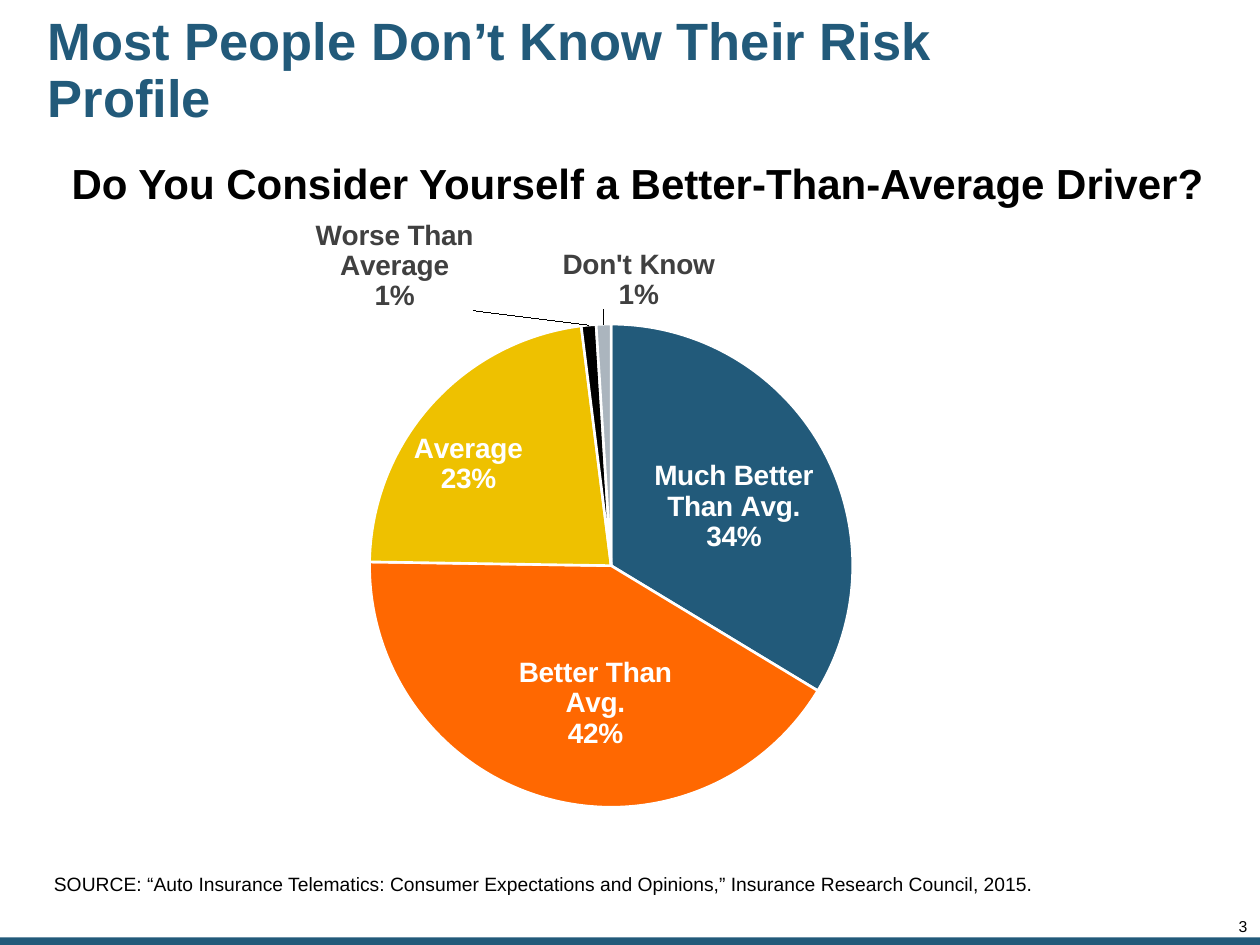
import pptx
import pptx.chart.data
import pptx.dml.color
import pptx.enum.chart
import pptx.enum.shapes
import pptx.enum.text
import pptx.oxml
import pptx.oxml.ns
import pptx.util
from dataclasses import dataclass

Inches = pptx.util.Inches
Align = pptx.enum.text.PP_ALIGN
Place = pptx.enum.chart.XL_LABEL_POSITION


@dataclass
class Theme:
    face: str = "Arial"
    blue: str = "225A7A"
    black: str = "000000"
    white: str = "FFFFFF"
    gray: str = "404040"
    head: int = 30
    ask: int = 24
    label: int = 16
    note: int = 11
    page: int = 9


theme = Theme()


def style(font, size, color, bold=False):
    font.name = theme.face
    font.size = pptx.util.Pt(size)
    font.bold = bold
    font.color.rgb = pptx.dml.color.RGBColor.from_string(color)


def write(shape, box, words, size, color, bold=False, inset=(0.1, 0.05)):
    shape.left, shape.top, shape.width, shape.height = map(Inches, box)
    frame = shape.text_frame
    frame.word_wrap = True
    frame.margin_left = frame.margin_right = Inches(inset[0])
    frame.margin_top = frame.margin_bottom = Inches(inset[1])
    line = frame.paragraphs[0]
    run = line.add_run()
    run.text = words
    style(run.font, size, color, bold)
    return line


deck = pptx.Presentation()
deck.slide_width, deck.slide_height = Inches(10), Inches(7.5)
slide = deck.slides.add_slide(deck.slide_layouts[5])
shapes = slide.shapes

bar = shapes.add_shape(pptx.enum.shapes.MSO_SHAPE.RECTANGLE,
                       Inches(0), Inches(7.44), Inches(10), Inches(0.06))
bar.shadow.inherit = False
bar.fill.solid()
bar.fill.fore_color.rgb = pptx.dml.color.RGBColor.from_string(theme.blue)
bar.line.fill.background()

title = shapes.title
line = write(title, (0.33, 0.1, 8.09, 0.94), "Most People Don’t Know Their Risk Profile",
             theme.head, theme.blue, True, (0.05, 0.05))
line.alignment = Align.LEFT
line.line_spacing = 0.9
title.text_frame.vertical_anchor = pptx.enum.text.MSO_ANCHOR.MIDDLE
title.text_frame.auto_size = pptx.enum.text.MSO_AUTO_SIZE.NONE

slices = [
    ("Much Better Than Avg.", 0.34, theme.blue, theme.white, Place.CENTER, 0.02, 0),
    ("Better Than Avg.", 0.42, "FF6801", theme.white, Place.CENTER, 0.02, 0.03),
    ("Average", 0.23, "EEC100", theme.white, Place.CENTER, -0.06, -0.03),
    ("Worse Than Average", 0.01, theme.black, theme.gray, Place.OUTSIDE_END, -0.13, -0.01),
    ("Don't Know", 0.01, "ABB5BE", theme.gray, Place.OUTSIDE_END, 0.04, -0.01),
]
data = pptx.chart.data.CategoryChartData(number_format="0%")
data.categories = [part[0] for part in slices]
data.add_series("Series 1", [part[1] for part in slices])
chart = shapes.add_chart(pptx.enum.chart.XL_CHART_TYPE.PIE, Inches(1.74), Inches(1.67),
                         Inches(6.99), Inches(5.64), data).chart
chart.has_legend = False
chart.has_title = False
style(chart.font, theme.label, theme.gray, True)
plot = chart.plots[0]
plot.vary_by_categories = False
series = plot.series[0]

space = pptx.oxml.ns.nsdecls("c")
area = chart._chartSpace.chart.plotArea
for old in area.xpath("c:layout"):
    area.remove(old)
area.insert(0, pptx.oxml.parse_xml(
    f'<c:layout {space}><c:manualLayout><c:layoutTarget val="inner"/>'
    '<c:xMode val="edge"/><c:yMode val="edge"/><c:x val="0.17"/><c:y val="0.16"/>'
    '<c:w val="0.55"/><c:h val="0.68"/></c:manualLayout></c:layout>'))

for spot, (name, share, fill, ink, place, right, down) in enumerate(slices):
    point = series.points[spot]
    point.format.fill.solid()
    point.format.fill.fore_color.rgb = pptx.dml.color.RGBColor.from_string(fill)
    point.format.line.width = pptx.util.Pt(1.5)
    point.format.line.color.rgb = pptx.dml.color.RGBColor.from_string(theme.white)
    style(point.data_label.font, theme.label, ink, True)
    point.data_label.position = place
    tag = series._element.xpath(f"c:dLbls/c:dLbl[c:idx/@val='{spot}']")[0]
    tag.xpath("c:showCatName")[0].set("val", "1")
    tag.xpath("c:showVal")[0].set("val", "1")
    tag.xpath("c:showPercent")[0].set("val", "0")
    tag.insert(1, pptx.oxml.parse_xml(
        f'<c:layout {space}><c:manualLayout><c:x val="{right}"/>'
        f'<c:y val="{down}"/></c:manualLayout></c:layout>'))
    tag.insert(2, pptx.oxml.parse_xml(
        f'<c:numFmt {space} formatCode="0%" sourceLinked="0"/>'))
    tag.append(pptx.oxml.parse_xml(f'<c:separator {space}>\n</c:separator>'))

notes = [
    ((9.41, 7.28, 0.49, 0.13), "3", theme.page, False, (0, 0), Align.RIGHT),
    ((0.33, 6.87, 8.76, 0.29),
     "SOURCE: “Auto Insurance Telematics: Consumer Expectations and Opinions,” "
     "Insurance Research Council, 2015.", theme.note, False, (0.1, 0.05), Align.LEFT),
    ((0.47, 1.2, 9.53, 0.5), "Do You Consider Yourself a Better-Than-Average Driver?",
     theme.ask, True, (0.1, 0.05), Align.LEFT),
]
for box, words, size, bold, inset, side in notes:
    text = shapes.add_textbox(*map(Inches, box))
    line = write(text, box, words, size, theme.black, bold, inset)
    line.alignment = side

deck.save("out.pptx")
